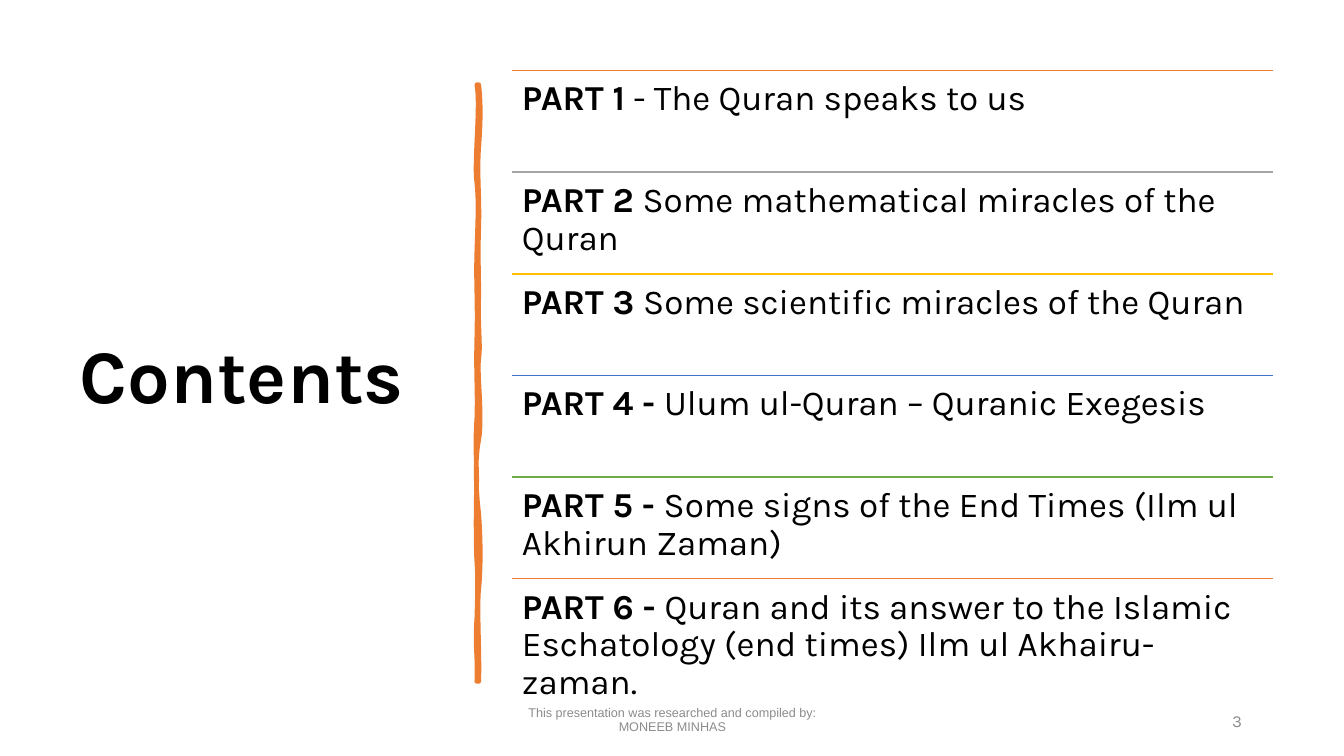
from dataclasses import dataclass

import pptx
import pptx.dml.color
import pptx.enum.shapes
import pptx.enum.text
import pptx.oxml.ns
import pptx.shapes.shapetree
import pptx.slide
import pptx.text.text
import pptx.util
from lxml import etree

Inches = pptx.util.Inches
Align = pptx.enum.text.PP_ALIGN
Anchor = pptx.enum.text.MSO_ANCHOR
Shapes = pptx.shapes.shapetree.SlideShapes | pptx.shapes.shapetree.GroupShapes
qn = pptx.oxml.ns.qn

BLACK = "000000"
GRAY = "8C8C8C"
ORANGE = "ED7D31"
LIST_LEFT, LIST_TOP, LIST_WIDTH, LIST_HEIGHT = 5.08, 0.7, 7.55, 6.05


@dataclass(frozen=True)
class Run:
    text: str
    size: float
    color: str = BLACK
    bold: bool = False
    font: str = "Karla"


@dataclass(frozen=True)
class Part:
    label: str
    topic: str
    color: str


@dataclass(frozen=True)
class Curve:
    first: tuple[float, float]
    second: tuple[float, float]
    end: tuple[float, float]


PARTS = [
    Part("PART 1", " - The Quran speaks to us", ORANGE),
    Part("PART 2 ", "Some mathematical miracles of the Quran", "A5A5A5"),
    Part("PART 3 ", "Some scientific miracles of the Quran", "FFC000"),
    Part("PART 4 - ", "Ulum ul-Quran – Quranic Exegesis", "4472C4"),
    Part("PART 5 - ", "Some signs of the End Times (Ilm ul Akhirun Zaman)", "70AD47"),
    Part(
        "PART 6 - ",
        "Quran and its answer to the Islamic Eschatology (end times) Ilm ul Akhairu-zaman.",
        ORANGE,
    ),
]

DIVIDER_START = (4.75, 0.84)
DIVIDER_CURVES = [
    Curve((4.77, 1.02), (4.77, 1.19), (4.75, 1.46)),
    Curve((4.73, 1.73), (4.76, 1.95), (4.75, 2.26)),
    Curve((4.74, 2.57), (4.75, 2.62), (4.75, 2.94)),
    Curve((4.74, 3.25), (4.77, 3.42), (4.75, 3.56)),
    Curve((4.73, 3.7), (4.79, 4.14), (4.75, 4.36)),
    Curve((4.71, 4.57), (4.72, 4.84), (4.75, 5.1)),
    Curve((4.77, 5.36), (4.77, 5.64), (4.75, 5.84)),
    Curve((4.73, 6.03), (4.76, 6.5), (4.75, 6.76)),
    Curve((4.74, 6.76), (4.73, 6.76), (4.73, 6.76)),
    Curve((4.74, 6.46), (4.71, 6.44), (4.73, 6.13)),
    Curve((4.74, 5.83), (4.74, 5.7), (4.73, 5.57)),
    Curve((4.72, 5.44), (4.72, 4.95), (4.73, 4.77)),
    Curve((4.73, 4.59), (4.71, 4.45), (4.73, 4.15)),
    Curve((4.74, 3.86), (4.72, 3.73), (4.73, 3.35)),
    Curve((4.74, 2.98), (4.72, 2.81), (4.73, 2.5)),
    Curve((4.74, 2.18), (4.75, 2), (4.73, 1.81)),
    Curve((4.7, 1.63), (4.77, 1.04), (4.73, 0.84)),
]


def rgb(color: str) -> pptx.dml.color.RGBColor:
    return pptx.dml.color.RGBColor.from_string(color)


def add_run(paragraph: pptx.text.text._Paragraph, run: Run) -> None:
    text_run = paragraph.add_run()
    text_run.text = run.text
    text_run.font.name = run.font
    text_run.font.size = pptx.util.Pt(run.size)
    text_run.font.bold = run.bold
    text_run.font.color.rgb = rgb(run.color)


def add_text(
    shapes: Shapes,
    box: tuple[float, float, float, float],
    lines: list[list[Run]],
    align: Align = Align.LEFT,
    anchor: Anchor = Anchor.MIDDLE,
    vertical_inset: float = 0.05,
    line_spacing: float = 0.9,
    space_after: float = 0,
) -> None:
    frame = shapes.add_textbox(*(Inches(length) for length in box)).text_frame
    frame.word_wrap = True
    frame.vertical_anchor = anchor
    frame.margin_top = frame.margin_bottom = Inches(vertical_inset)
    paragraph = frame.paragraphs[0]
    paragraph.alignment = align
    paragraph.line_spacing = line_spacing
    paragraph.space_after = pptx.util.Pt(space_after)
    for index, line in enumerate(lines):
        if index:
            paragraph.add_line_break()
        for run in line:
            add_run(paragraph, run)


def add_rule(shapes: Shapes, top: float, color: str) -> None:
    rule = shapes.add_connector(
        pptx.enum.shapes.MSO_CONNECTOR.STRAIGHT,
        Inches(LIST_LEFT), Inches(top), Inches(LIST_LEFT + LIST_WIDTH), Inches(top),
    )
    rule.line.color.rgb = rgb(color)
    rule.line.width = pptx.util.Pt(1)
    etree.SubElement(rule._element.spPr, qn("a:effectLst"))


def add_divider(shapes: Shapes) -> None:
    builder = shapes.build_freeform(*(Inches(length) for length in DIVIDER_START))
    ends = [(Inches(curve.end[0]), Inches(curve.end[1])) for curve in DIVIDER_CURVES]
    builder.add_line_segments(ends, close=True)
    divider = builder.convert_to_shape()
    segments = list(divider._element.iter(qn("a:lnTo")))
    for segment, curve in zip(segments, DIVIDER_CURVES):
        bezier = etree.Element(qn("a:cubicBezTo"))
        for x, y in (curve.first, curve.second, curve.end):
            point = etree.SubElement(bezier, qn("a:pt"))
            point.set("x", str(Inches(x) - divider.left))
            point.set("y", str(Inches(y) - divider.top))
        segment.getparent().replace(segment, bezier)
    divider.shadow.inherit = False
    divider.fill.solid()
    divider.fill.fore_color.rgb = rgb(ORANGE)
    divider.line.color.rgb = rgb(ORANGE)
    divider.line.width = pptx.util.Pt(3.25)


def add_parts(shapes: Shapes) -> None:
    row_height = LIST_HEIGHT / len(PARTS)
    for index, part in enumerate(PARTS):
        top = LIST_TOP + index * row_height
        add_rule(shapes, top, part.color)
        add_text(
            shapes,
            (LIST_LEFT, top, LIST_WIDTH, row_height),
            [[Run(part.label, 25, bold=True), Run(part.topic, 25)]],
            anchor=Anchor.TOP,
            vertical_inset=0.1,
        )


def main() -> None:
    presentation = pptx.Presentation()
    presentation.slide_width = Inches(40 / 3)
    presentation.slide_height = Inches(7.5)
    slide = presentation.slides.add_slide(presentation.slide_layouts[6])
    shapes = slide.shapes
    add_text(shapes, (0.69, 0.7, 3.74, 6.11), [[Run("Contents", 54, bold=True)]])
    add_divider(shapes)
    footer_lines = ["This presentation was researched and compiled by:", "MONEEB MINHAS"]
    add_text(
        shapes,
        (4.42, 6.95, 4.5, 0.4),
        [[Run(line, 9, GRAY, font="Arial")] for line in footer_lines],
        Align.CENTER,
        space_after=6,
    )
    add_text(
        shapes,
        (9.42, 6.95, 3, 0.4),
        [[Run("3", 12, GRAY)]],
        Align.RIGHT,
        line_spacing=1.0,
        space_after=6,
    )
    add_parts(shapes.add_group_shape().shapes)
    presentation.save("out.pptx")


if __name__ == "__main__":
    main()
